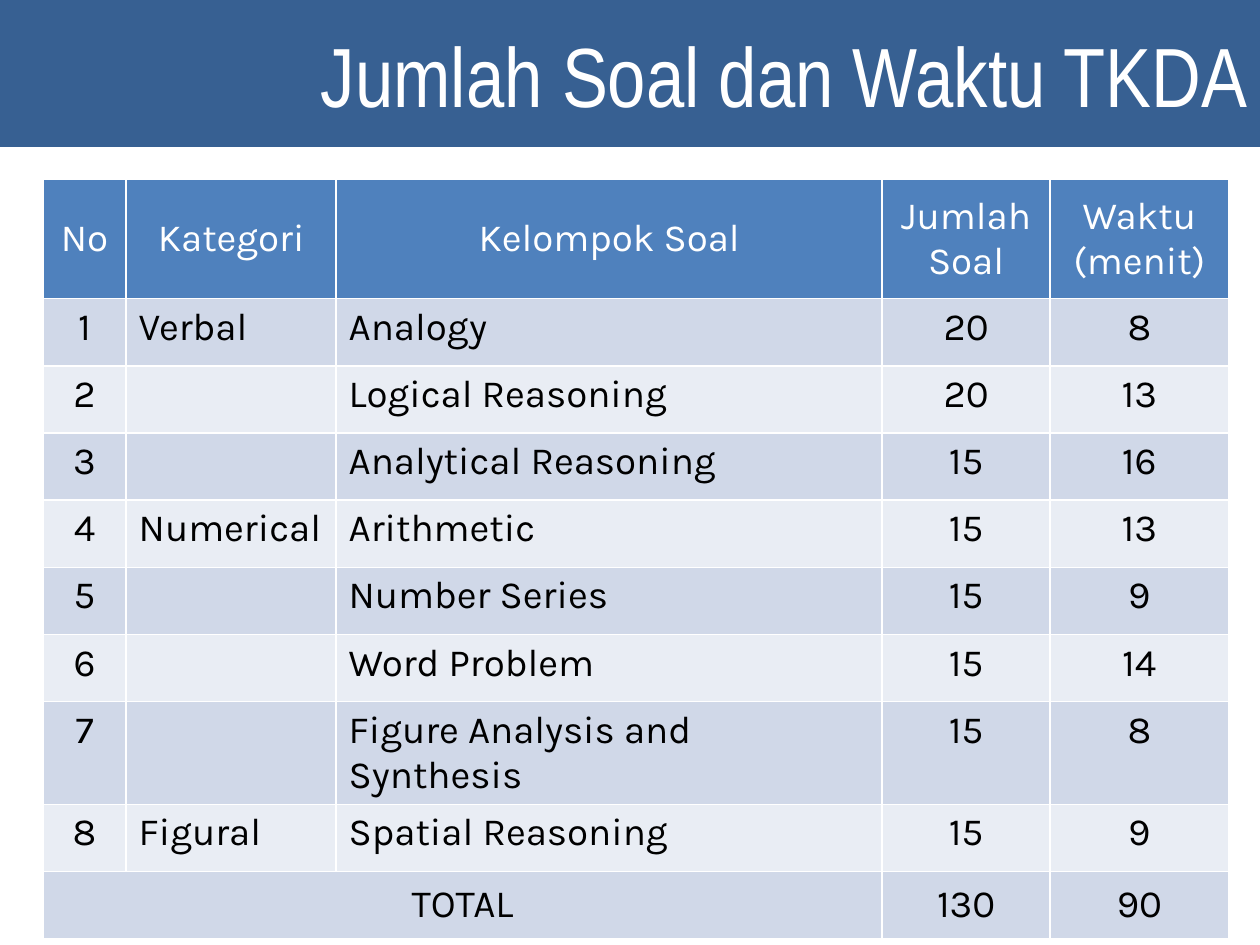
from pptx import Presentation
from pptx.dml.color import RGBColor
from pptx.enum import shapes, text
from pptx.util import Pt

LEFT, CENTER, RIGHT = text.PP_ALIGN.LEFT, text.PP_ALIGN.CENTER, text.PP_ALIGN.RIGHT
TOP, MIDDLE = text.MSO_ANCHOR.TOP, text.MSO_ANCHOR.MIDDLE


def paint(fill, color):
    fill.solid()
    fill.fore_color.rgb = RGBColor.from_string(color)


def write(tf, words, font="Karla", size=22, color="000000", align=LEFT, space=3):
    """Fill the first paragraph; a vertical tab in words is a line break."""
    p = tf.paragraphs[0]
    p.text = words
    p.alignment = align
    p.space_before = p.space_after = Pt(space)
    for r in p.runs:
        r.font.name, r.font.size, r.font.bold = font, Pt(size), False
        paint(r.font.fill, color)


prs = Presentation()
prs.slide_width, prs.slide_height = Pt(720), Pt(540)
s = prs.slides.add_slide(prs.slide_layouts[6])

# Title band
sp = s.shapes.add_shape(shapes.MSO_SHAPE.RECTANGLE, 0, 0, Pt(720), Pt(84))
sp.shadow.inherit = False
sp.line.fill.background()
paint(sp.fill, "376092")
sp.text_frame.vertical_anchor = MIDDLE
write(sp.text_frame, "Jumlah Soal dan Waktu TKDA", font="Arial Narrow",
      size=48, color="FFFFFF", align=RIGHT, space=0)

# Question table
rows = [
    ("No", "Kategori", "Kelompok Soal", "Jumlah Soal", "Waktu\v(menit)"),
    ("1", "Verbal", "Analogy", "20", "8"),
    ("2", "", "Logical Reasoning", "20", "13"),
    ("3", "", "Analytical Reasoning", "15", "16"),
    ("4", "Numerical", "Arithmetic", "15", "13"),
    ("5", "", "Number Series", "15", "9"),
    ("6", "", "Word Problem", "15", "14"),
    ("7", "", "Figure Analysis and Synthesis", "15", "8"),
    ("8", "Figural", "Spatial Reasoning", "15", "9"),
    ("TOTAL", "", "", "130", "90"),
]
widths = [47.6, 120, 312, 96, 102]
last = len(rows) - 1
tbl = s.shapes.add_table(len(rows), len(widths), Pt(24.5), Pt(102.3),
                         Pt(sum(widths)), Pt(414)).table
for col, width in zip(tbl.columns, widths):
    col.width = Pt(width)
for i, row in enumerate(rows):
    head = i == 0
    tbl.rows[i].height = Pt(68.4 if head else 38.4)
    for j, words in enumerate(row):
        cell = tbl.cell(i, j)
        paint(cell.fill, "4F81BD" if head else "D0D8E8" if i % 2 else "E9EDF4")
        cell.vertical_anchor = MIDDLE if i in (0, last) else TOP
        centered = i in (0, last) or j not in (1, 2)
        write(cell.text_frame, words, color="FFFFFF" if head else "000000",
              align=CENTER if centered else LEFT)
tbl.cell(last, 0).merge(tbl.cell(last, 2))

prs.save("out.pptx")
